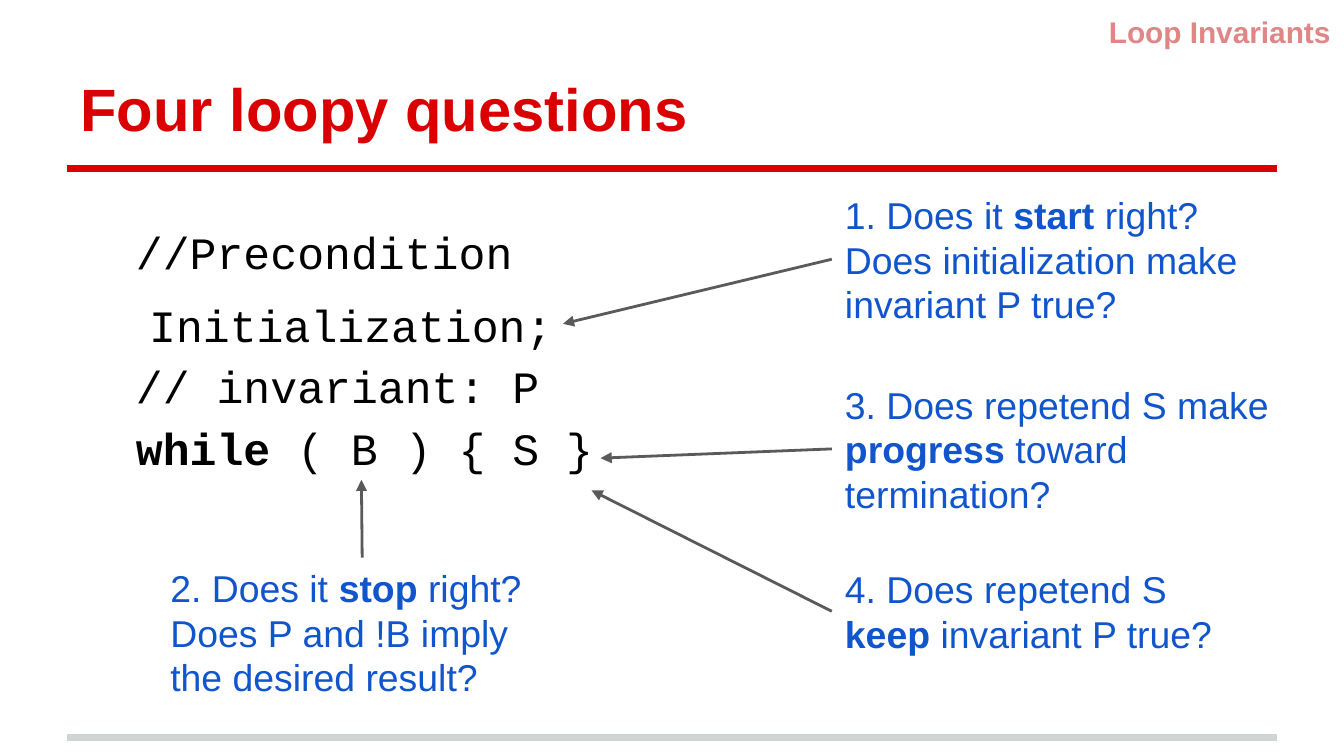
from lxml import etree
from pptx import Presentation
from pptx.dml.color import RGBColor
from pptx.enum.shapes import MSO_CONNECTOR
from pptx.enum.text import MSO_ANCHOR, MSO_AUTO_SIZE, PP_ALIGN
from pptx.oxml.ns import qn
from pptx.util import Cm, Pt

STRAIGHT = MSO_CONNECTOR.STRAIGHT
TOP, MIDDLE, BOTTOM = MSO_ANCHOR.TOP, MSO_ANCHOR.MIDDLE, MSO_ANCHOR.BOTTOM
LEFT, RIGHT = PP_ALIGN.LEFT, PP_ALIGN.RIGHT
NO_AUTOFIT = MSO_AUTO_SIZE.NONE
TOP_SIDE, LEFT_SIDE = 0, 1

RED = RGBColor(0xDA, 0x00, 0x02)
PINK = RGBColor(0xE0, 0x86, 0x86)
BLUE = RGBColor(0x11, 0x55, 0xCC)
BLACK = RGBColor(0x00, 0x00, 0x00)
DARK_GREY = RGBColor(0x5B, 0x59, 0x5A)
LIGHT_GREY = RGBColor(0xCF, 0xD4, 0xD4)


def fill_text(box, paragraphs, anchor, font_name, size, color, align=LEFT):
    frame = box.text_frame
    frame.word_wrap = True
    frame.auto_size = NO_AUTOFIT
    frame.vertical_anchor = anchor
    frame.margin_left = frame.margin_right = Cm(0.25)
    frame.margin_top = frame.margin_bottom = Cm(0.25)
    for number, spans in enumerate(paragraphs):
        para = frame.add_paragraph() if number else frame.paragraphs[0]
        para.alignment = align
        para.font.name = font_name
        para.font.size = Pt(size)
        para.font.color.rgb = color
        for text, bold in spans:
            span = para.add_run()
            span.text = text
            span.font.bold = bold


def add_line(page, x1, y1, x2, y2, color, width):
    line = page.shapes.add_connector(STRAIGHT, Cm(x1), Cm(y1), Cm(x2), Cm(y2))
    line.line.color.rgb = color
    line.line.width = Pt(width)
    etree.SubElement(line._element.spPr, qn("a:effectLst"))
    return line


deck = Presentation()
deck.slide_width, deck.slide_height = Cm(25.4), Cm(14.29)
page = deck.slides.add_slide(deck.slide_layouts[5])

for y, color in [(13.94, LIGHT_GREY), (3.18, RED)]:
    add_line(page, 1.27, y, 24.13, y, color, 4)

title = page.shapes.title
title.left, title.top, title.width, title.height = Cm(1.27), Cm(0.58), Cm(22.86), Cm(2.39)
fill_text(title, [[("Four loopy questions", True)]], BOTTOM, "Arial", 32, RED)

topic = page.shapes.add_textbox(Cm(19.46), Cm(0), Cm(5.94), Cm(1.02))
fill_text(topic, [[("Loop Invariants", True)]], TOP, "Arial", 16, PINK, RIGHT)

code = page.shapes.add_textbox(Cm(1.3), Cm(3.84), Cm(10.49), Cm(5.79))
code_lines = [
    [("//Precondition", False)],
    [("Initialization;", False)],
    [("// invariant: P", False)],
    [("while ", True), ("( B ) { S }", False)],
]
fill_text(code, code_lines, TOP, "Courier New", 24, BLACK)
code_layout = [(1.02, 6), (1.27, 6), (1.02, 0), (1.02, 0)]
for para, (indent, space) in zip(code.text_frame.paragraphs, code_layout):
    para.line_spacing = 1.15
    para.space_before = Pt(space)
    properties = para._p.get_or_add_pPr()
    properties.set("marL", str(Cm(indent)))
    properties.set("indent", "0")

questions = [
    ((15.72, 4.39, 8.23, 1.02), LEFT_SIDE, (10.64, 6.12),
     [[("1. Does it ", False), ("start", True),
       (" right? Does initialization make invariant P true?", False)]]),
    ((2.97, 10.54, 7.75, 2.82), TOP_SIDE, (6.83, 9.07),
     [[("2. Does it ", False), ("stop", True), (" right?", False)],
      [("Does P and !B imply the desired result?", False)]]),
    ((15.72, 7.29, 9.27, 2.39), LEFT_SIDE, (11.35, 8.66),
     [[("3. Does repetend S make ", False), ("progress ", True),
       ("toward termination?", False)]]),
    ((15.72, 10.36, 8.23, 2.39), LEFT_SIDE, (11.18, 9.27),
     [[("4. Does repetend S ", False), ("keep", True),
       (" invariant P true?", False)]]),
]
for place, side, target, paragraphs in questions:
    question = page.shapes.add_textbox(*[Cm(length) for length in place])
    fill_text(question, paragraphs, MIDDLE, "Arial", 20, BLUE)
    arrow = add_line(page, *target, *target, DARK_GREY, 1.5)
    arrow.begin_connect(question, side)
    etree.SubElement(arrow.line._get_or_add_ln(), qn("a:tailEnd"), type="triangle")

deck.save("out.pptx")
